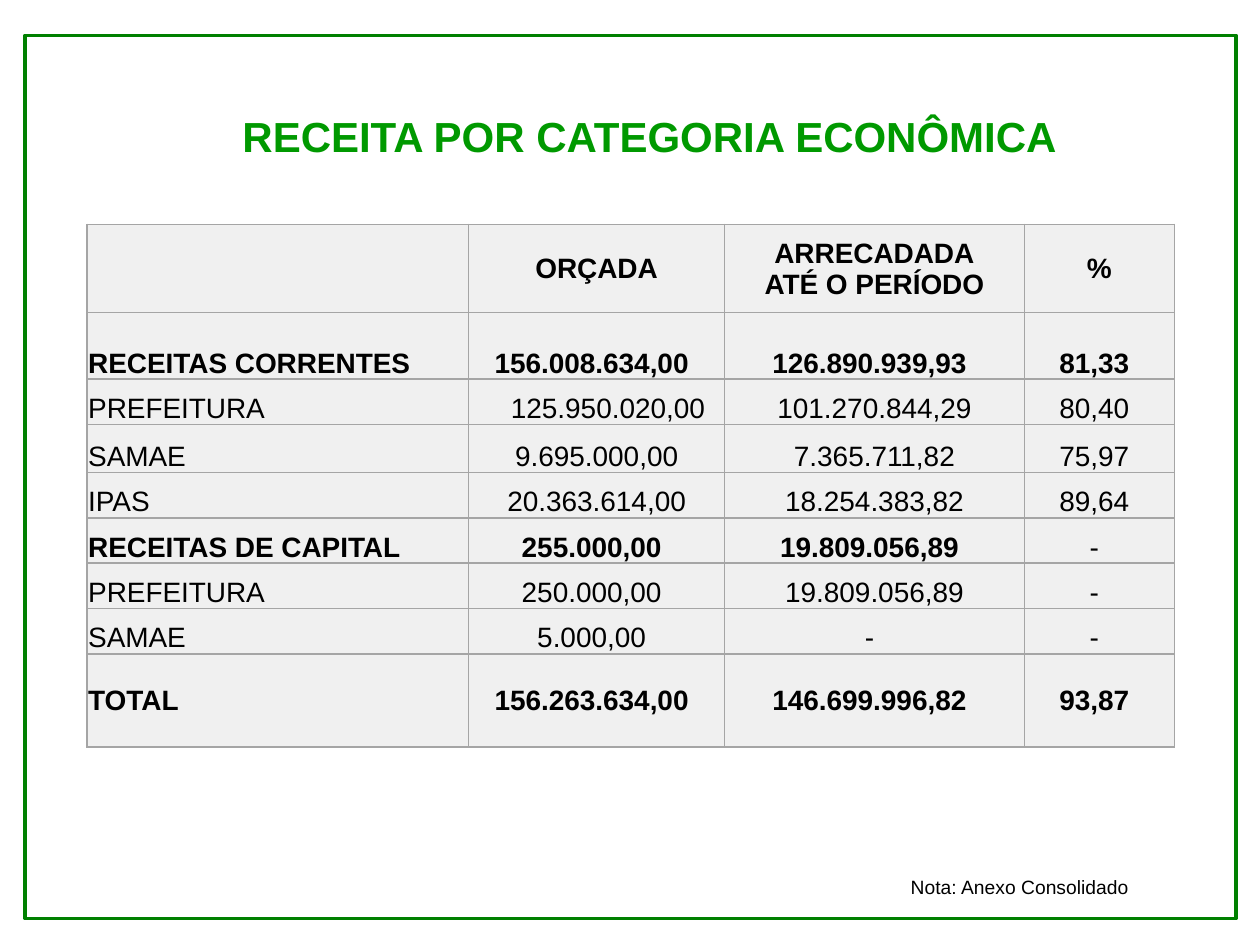
from lxml import etree
from pptx import Presentation
from pptx.dml.color import RGBColor
from pptx.enum.shapes import MSO_SHAPE
from pptx.enum.text import MSO_ANCHOR, PP_ALIGN
from pptx.oxml.ns import qn
from pptx.util import Inches, Pt

RECT = MSO_SHAPE.RECTANGLE
LEFT, CENTER = PP_ALIGN.LEFT, PP_ALIGN.CENTER
MIDDLE, BOTTOM = MSO_ANCHOR.MIDDLE, MSO_ANCHOR.BOTTOM

COLORS = {
    "frame": "008000",
    "title": "009900",
    "text": "000000",
    "cell": "F0F0F0",
    "border": "A5A5A5",
}
FONT = "Arial"
COLUMNS = [3.03, 2.03, 2.38, 1.19]
ROWS = [0.7, 0.53, 0.36, 0.38, 0.36, 0.36, 0.36, 0.36, 0.74]
REVENUE = [
    ["", "ORÇADA", "ARRECADADA\nATÉ O PERÍODO", "%"],
    ["RECEITAS CORRENTES", "156.008.634,00", "126.890.939,93", "81,33"],
    ["PREFEITURA", "125.950.020,00", "101.270.844,29", "80,40"],
    ["SAMAE", "9.695.000,00", "7.365.711,82", "75,97"],
    ["IPAS", "20.363.614,00", "18.254.383,82", "89,64"],
    ["RECEITAS DE CAPITAL", "255.000,00", "19.809.056,89", "-"],
    ["PREFEITURA", "250.000,00", "19.809.056,89", "-"],
    ["SAMAE", "5.000,00", "-", "-"],
    ["TOTAL", "156.263.634,00", "146.699.996,82", "93,87"],
]
HEADER, CURRENT, CITY, CAPITAL, TOTAL = 0, 1, 2, 5, 8
BOLD_ROWS = {HEADER, CURRENT, CAPITAL, TOTAL}
NARROW_MARGIN = {(r, c) for r in (2, 3, 4) for c in (1, 2)} | {(6, 2)}


def rgb(name):
    """Return the named colour."""
    return RGBColor.from_string(COLORS[name])


def style(p, size, color="text", bold=False, align=LEFT):
    """Set the font and alignment of a paragraph."""
    p.alignment = align
    p.font.name, p.font.size, p.font.bold = FONT, Pt(size), bold
    p.font.color.rgb = rgb(color)


def add_frame(s, x, y, w, h):
    """Add the outlined page frame."""
    sp = s.shapes.add_shape(RECT, *map(Inches, (x, y, w, h)))
    sp.shadow.inherit = False
    sp.fill.background()
    sp.line.color.rgb = rgb("frame")
    sp.line.width = Pt(2)


def add_text(s, box, text, size, **look):
    """Add a one-paragraph text box and return its frame."""
    tf = s.shapes.add_textbox(*map(Inches, box)).text_frame
    tf.word_wrap = True
    tf.text = text
    style(tf.paragraphs[0], size, **look)
    return tf


def add_borders(cell):
    """Draw a thin line on all four sides of a cell."""
    tc_pr = cell._tc.get_or_add_tcPr()
    for side in ("lnL", "lnR", "lnT", "lnB"):
        ln = etree.SubElement(tc_pr, qn(f"a:{side}"), w=str(Pt(1)))
        fill = etree.SubElement(ln, qn("a:solidFill"))
        etree.SubElement(fill, qn("a:srgbClr"), val=COLORS["border"])


def fill_cell(cell, row, col, text):
    """Write and style one table cell."""
    narrow = row == HEADER or (row, col) in NARROW_MARGIN
    cell.margin_left = Inches(0.19 if (row, col) == (CITY, 1) else 0.01)
    cell.margin_right = Inches(0.01 if narrow else 0.09)
    cell.margin_top, cell.margin_bottom = Inches(0.01), 0
    cell.vertical_anchor = MIDDLE if row in (HEADER, TOTAL) else BOTTOM
    add_borders(cell)
    cell.fill.solid()
    cell.fill.fore_color.rgb = rgb("cell")
    cell.text = text
    for p in cell.text_frame.paragraphs:
        style(p, 16, bold=row in BOLD_ROWS and text != "-",
              align=CENTER if col else LEFT)


def add_revenue_table(s, x, y):
    """Add the table of revenue by category."""
    size = Inches(sum(COLUMNS)), Inches(sum(ROWS))
    table = s.shapes.add_table(len(ROWS), len(COLUMNS),
                               Inches(x), Inches(y), *size).table
    for column, width in zip(table.columns, COLUMNS):
        column.width = Inches(width)
    for r, (height, texts) in enumerate(zip(ROWS, REVENUE)):
        table.rows[r].height = Inches(height)
        for c, text in enumerate(texts):
            fill_cell(table.cell(r, c), r, c, text)
    table.cell(CURRENT, 0).text_frame.paragraphs[0].line_spacing = 1.5


def main():
    """Build and save the slide."""
    prs = Presentation()
    prs.slide_width, prs.slide_height = Inches(10), Inches(7.5)
    s = prs.slides.add_slide(prs.slide_layouts[6])
    add_frame(s, 0.2, 0.28, 9.61, 7.01)
    tf = add_text(s, (0.66, 0.87, 8.62, 0.91), "RECEITA POR CATEGORIA ECONÔMICA",
                  24, color="title", bold=True, align=CENTER)
    tf.margin_left = Inches(0.47)
    tf.paragraphs[0].line_spacing = 0.9
    add_revenue_table(s, 0.69, 1.78)
    add_text(s, (7.13, 6.9, 2.6, 0.29), "Nota: Anexo Consolidado", 11)
    prs.save("out.pptx")


if __name__ == "__main__":
    main()
